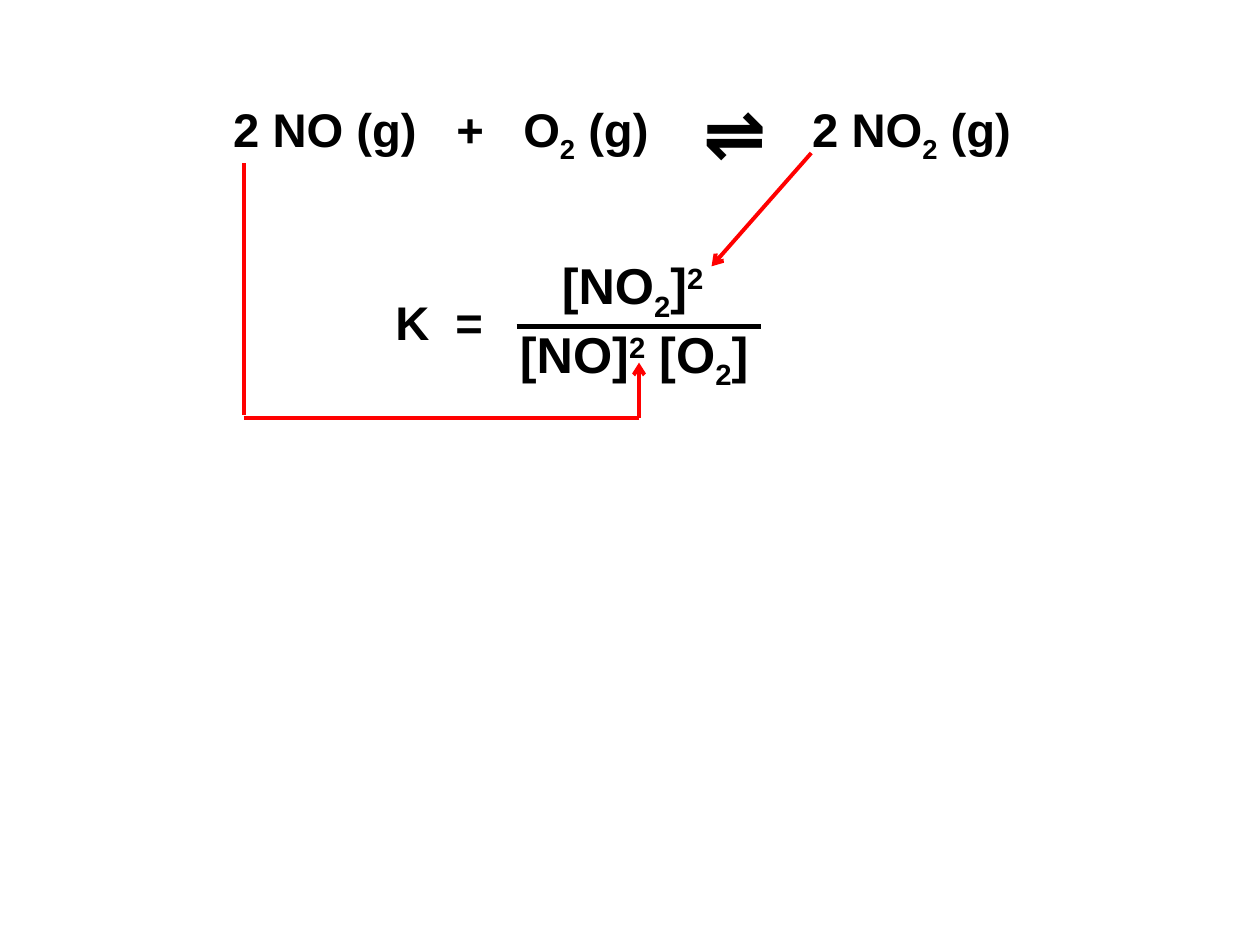
from lxml.etree import SubElement
from pptx import Presentation
from pptx.dml.color import RGBColor
from pptx.enum.shapes import MSO_CONNECTOR, MSO_SHAPE
from pptx.enum.text import MSO_ANCHOR, MSO_AUTO_SIZE, PP_ALIGN
from pptx.oxml.ns import qn
from pptx.util import Inches, Pt

THEME = {
    "font": "Arial",
    "ink": RGBColor(0, 0, 0),
    "paper": RGBColor(255, 255, 255),
    "accent": RGBColor(255, 0, 0),
    "equation": 30,
    "fraction": 32,
    "equilibrium": 48,
    "bar_width": 2.75,
    "pointer_width": 2.5,
}
BASELINE = {"sub": "-25000", "sup": "30000"}

# Each line of text is a list of (text, level) runs
REACTION = [("2 NO (g)\t+\tO", ""), ("2", "sub"), (" (g)\t2 NO", ""),
            ("2", "sub"), (" (g)", "")]
EQUILIBRIUM = [("⇌", "")]
CONSTANT = [("K\t=", "")]
PRODUCTS = [("[NO", ""), ("2", "sub"), ("]", ""), ("2", "sup")]
REACTANTS = [("[NO]", ""), ("2", "sup"), (" [O", ""), ("2", "sub"), ("]", "")]

# Box (left, top, width, height), size, lines, tab stops, first-line indent
LABELS = [
    ((1.96, 0.84, 7.95, 0.61), "equation", [REACTION], [1.97, 2.56, 5.11], 0),
    ((6.11, 0.7, 0.92, 0.91), "equilibrium", [EQUILIBRIUM], [], 0),
    ((3.39, 2.54, 1.18, 0.61), "equation", [CONSTANT], [0.53], 0),
]
FRACTION = ((4.49, 2.26, 2.87, 1.18), "fraction", [PRODUCTS, REACTANTS], [], 0.37)

FRACTION_BAR = [(4.56, 2.88), (6.72, 2.88)]
PRODUCT_POINTER = [(7.16, 1.35), (6.28, 2.35)]
REACTANT_DROP = [(2.15, 1.44), (2.15, 3.66)]
REACTANT_POINTER = [(2.15, 3.69), (5.64, 3.69), (5.64, 3.2)]


def write_lines(shape, size, lines, tabs, indent):
    frame = shape.text_frame
    frame_format = {
        "word_wrap": True,
        "auto_size": MSO_AUTO_SIZE.SHAPE_TO_FIT_TEXT,
    }
    for key, value in frame_format.items():
        setattr(frame, key, value)
    font_format = {"name": THEME["font"], "size": Pt(THEME[size]), "bold": True}
    for number, line in enumerate(lines):
        paragraph = frame.add_paragraph() if number else frame.paragraphs[0]
        paragraph.alignment = PP_ALIGN.LEFT
        properties = paragraph._p.get_or_add_pPr()
        if indent and number == 0:
            properties.set("marL", str(Inches(indent)))
        if tabs:
            stops = SubElement(properties, qn("a:tabLst"))
            for stop in tabs:
                SubElement(stops, qn("a:tab"), pos=str(Inches(stop)), algn="l")
        for text, level in line:
            run = paragraph.add_run()
            run.text = text
            for key, value in font_format.items():
                setattr(run.font, key, value)
            run.font.color.rgb = THEME["ink"]
            if level:
                run._r.get_or_add_rPr().set("baseline", BASELINE[level])


def add_label(slide, box, *content):
    label = slide.shapes.add_textbox(*map(Inches, box))
    write_lines(label, *content)


def add_fraction(slide, box, *content):
    fraction = slide.shapes.add_shape(MSO_SHAPE.RECTANGLE, *map(Inches, box))
    fraction.shadow.inherit = False
    fraction.fill.solid()
    fraction.fill.fore_color.rgb = THEME["paper"]
    fraction.line.fill.background()
    fraction.text_frame.vertical_anchor = MSO_ANCHOR.MIDDLE
    write_lines(fraction, *content)


def add_route(slide, points, color, width, arrow=False):
    """Join the points with straight lines; an arrow sits at the last point."""
    for start, end in zip(points, points[1:]):
        segment = slide.shapes.add_connector(
            MSO_CONNECTOR.STRAIGHT, *map(Inches, start + end))
        segment.line.color.rgb = THEME[color]
        segment.line.width = Pt(THEME[width])
        if arrow and end == points[-1]:
            SubElement(segment.line._get_or_add_ln(), qn("a:tailEnd"), type="arrow")
        SubElement(segment._element.spPr, qn("a:effectLst"))


def main():
    deck = Presentation()
    deck.slide_width, deck.slide_height = Inches(11.12), Inches(8.33)
    slide = deck.slides.add_slide(deck.slide_layouts[6])
    for label in LABELS:
        add_label(slide, *label)
    add_fraction(slide, *FRACTION)
    add_route(slide, FRACTION_BAR, "ink", "bar_width")
    add_route(slide, PRODUCT_POINTER, "accent", "pointer_width", arrow=True)
    add_route(slide, REACTANT_DROP, "accent", "pointer_width")
    add_route(slide, REACTANT_POINTER, "accent", "pointer_width", arrow=True)
    deck.save("out.pptx")


if __name__ == "__main__":
    main()
